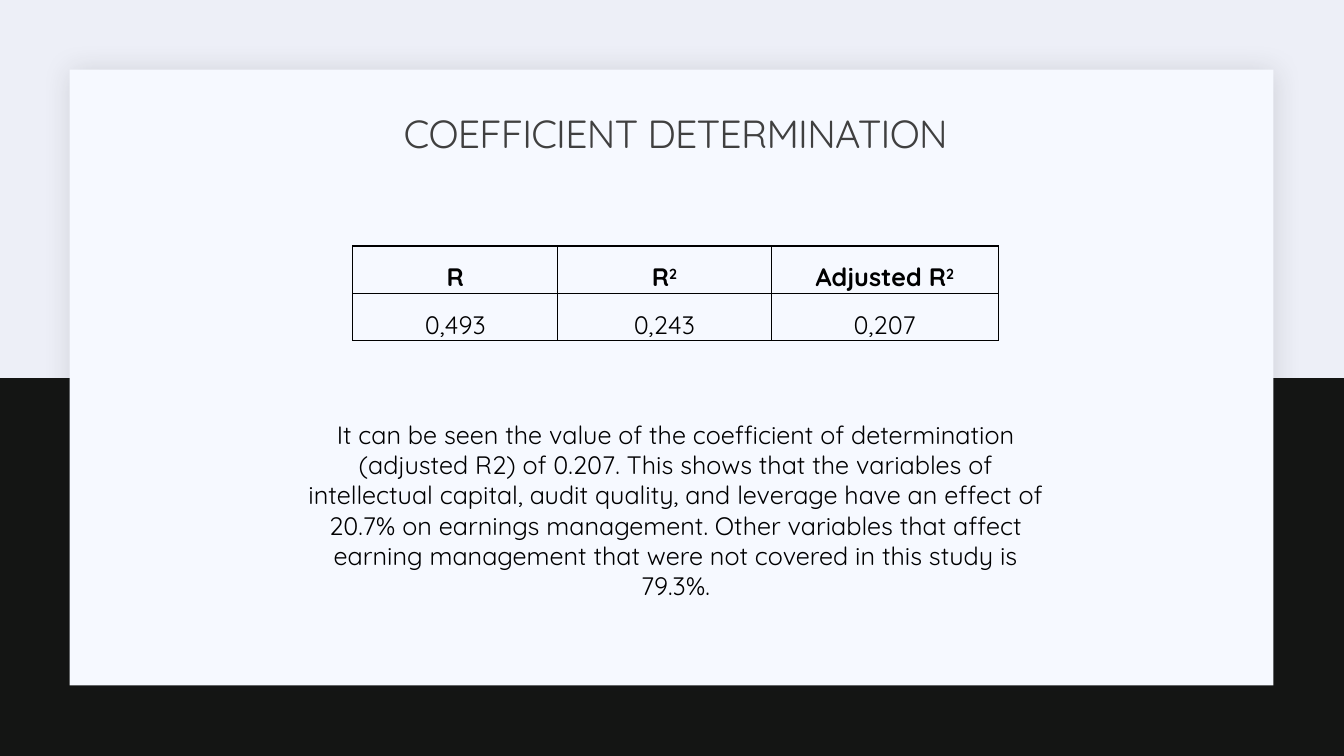
from lxml import etree
from pptx import Presentation
from pptx.dml.color import RGBColor
from pptx.enum.shapes import MSO_SHAPE
from pptx.enum.text import MSO_ANCHOR, MSO_AUTO_SIZE, PP_ALIGN
from pptx.oxml import parse_xml
from pptx.oxml.ns import nsdecls, qn
from pptx.util import Inches, Pt

RECTANGLE = MSO_SHAPE.RECTANGLE
CENTER = PP_ALIGN.CENTER
MIDDLE = MSO_ANCHOR.MIDDLE
TOP = MSO_ANCHOR.TOP
NO_AUTOFIT = MSO_AUTO_SIZE.NONE
GROW = MSO_AUTO_SIZE.SHAPE_TO_FIT_TEXT

BACKGROUND = RGBColor(0xED, 0xEF, 0xF7)
BAND = RGBColor(0x14, 0x15, 0x14)
PANEL = RGBColor(0xF6, 0xF9, 0xFF)
SHADOW = RGBColor(0x1F, 0x21, 0x25)
TITLE = RGBColor(0x40, 0x40, 0x40)
BLACK = RGBColor(0x00, 0x00, 0x00)

HEADERS = [("R", ""), ("R", "2"), ("Adjusted R", "2")]
VALUES = [("0,493", ""), ("0,243", ""), ("0,207", "")]
EXPLANATION = (
    "It can be seen the value of the coefficient of determination (adjusted R2) "
    "of 0.207. This shows that the variables of intellectual capital, audit "
    "quality, and leverage have an effect of 20.7% on earnings management. "
    "Other variables that affect earning management that were not covered in "
    "this study is 79.3%."
)


class SlideBuilder:
    font_name = "Quicksand"

    def __init__(self, presentation):
        self.slide = presentation.slides.add_slide(presentation.slide_layouts[5])
        fill = self.slide.background.fill
        fill.solid()
        fill.fore_color.rgb = BACKGROUND

    def add_text(self, paragraph, text, color=BLACK, **formats):
        paragraph.alignment = CENTER
        run = paragraph.add_run()
        run.text = text
        run.font.color.rgb = color
        settings = {"name": self.font_name, "size": Pt(18), "bold": False, **formats}
        for name, value in settings.items():
            setattr(run.font, name, value)
        return run

    def place(self, shape, bounds):
        for name, value in zip(("left", "top", "width", "height"), bounds):
            setattr(shape, name, Inches(value))

    def rectangle(self, bounds, color):
        shape = self.slide.shapes.add_shape(RECTANGLE, *map(Inches, bounds))
        shape.shadow.inherit = False
        shape.fill.solid()
        shape.fill.fore_color.rgb = color
        shape.line.fill.background()
        return shape

    def soft_shadow(self, shape):
        effects = shape._element.spPr.find(qn("a:effectLst"))
        effects.append(parse_xml(
            f'<a:outerShdw {nsdecls("a")} blurRad="{Pt(20)}" dist="{Pt(2)}" '
            f'dir="2700000" algn="ctr" rotWithShape="0"><a:srgbClr val="{SHADOW}">'
            '<a:alpha val="15000"/></a:srgbClr></a:outerShdw>'))

    def title(self, bounds, text):
        title = self.slide.shapes.title
        self.place(title, bounds)
        # Bring the title in front of the panel
        self.slide.shapes._spTree.append(title._element)
        frame = title.text_frame
        frame.vertical_anchor = MIDDLE
        frame.auto_size = NO_AUTOFIT
        paragraph = frame.paragraphs[0]
        paragraph.line_spacing = 0.9
        run = self.add_text(paragraph, text, TITLE, size=Pt(28))
        run.font._element.set("spc", "-50")

    def text_box(self, bounds, text):
        frame = self.slide.shapes.add_textbox(*map(Inches, bounds)).text_frame
        frame.word_wrap = True
        frame.auto_size = GROW
        self.add_text(frame.paragraphs[0], text)

    def cell(self, cell, text, superscript, bold):
        settings = {"margin_left": Inches(0.07), "margin_right": Inches(0.07),
                    "margin_top": 0, "margin_bottom": 0, "vertical_anchor": TOP}
        for name, value in settings.items():
            setattr(cell, name, value)
        paragraph = cell.text_frame.paragraphs[0]
        paragraph.line_spacing = 1.5
        self.add_text(paragraph, text, bold=bold)
        if superscript:
            run = self.add_text(paragraph, superscript, bold=bold)
            run.font._element.set("baseline", "30000")
        # Black border on every side
        properties = cell._tc.get_or_add_tcPr()
        for side in ("lnL", "lnR", "lnT", "lnB"):
            line = etree.SubElement(properties, qn(f"a:{side}"), w=str(Pt(1)))
            solid = etree.SubElement(line, qn("a:solidFill"))
            etree.SubElement(solid, qn("a:srgbClr"), val=str(BLACK))
        cell.fill.background()

    def table(self, bounds, widths, rows):
        table = self.slide.shapes.add_table(
            len(rows), len(widths), *map(Inches, bounds)).table
        table.first_row = False
        table.horz_banding = False
        for column, width in zip(table.columns, widths):
            column.width = Inches(width)
        for row_index, row in enumerate(rows):
            for column_index, (text, superscript) in enumerate(row):
                self.cell(table.cell(row_index, column_index), text, superscript,
                          bold=row_index == 0)


def main():
    presentation = Presentation()
    presentation.slide_width = Inches(13.33)
    presentation.slide_height = Inches(7.5)
    builder = SlideBuilder(presentation)

    # Backdrop and panel
    builder.rectangle((0, 3.75, 13.33, 3.75), BAND)
    panel = builder.rectangle((0.69, 0.69, 11.94, 6.11), PANEL)
    builder.soft_shadow(panel)

    # Title, coefficients and explanation
    builder.title((1.2, 1.03, 11, 0.64), "COEFFICIENT DETERMINATION")
    builder.table((3.5, 2.44, 6.4, 0.9), (2.03, 2.12, 2.25), [HEADERS, VALUES])
    builder.text_box((2.89, 4.11, 7.62, 1.92), EXPLANATION)

    presentation.save("out.pptx")


if __name__ == "__main__":
    main()
